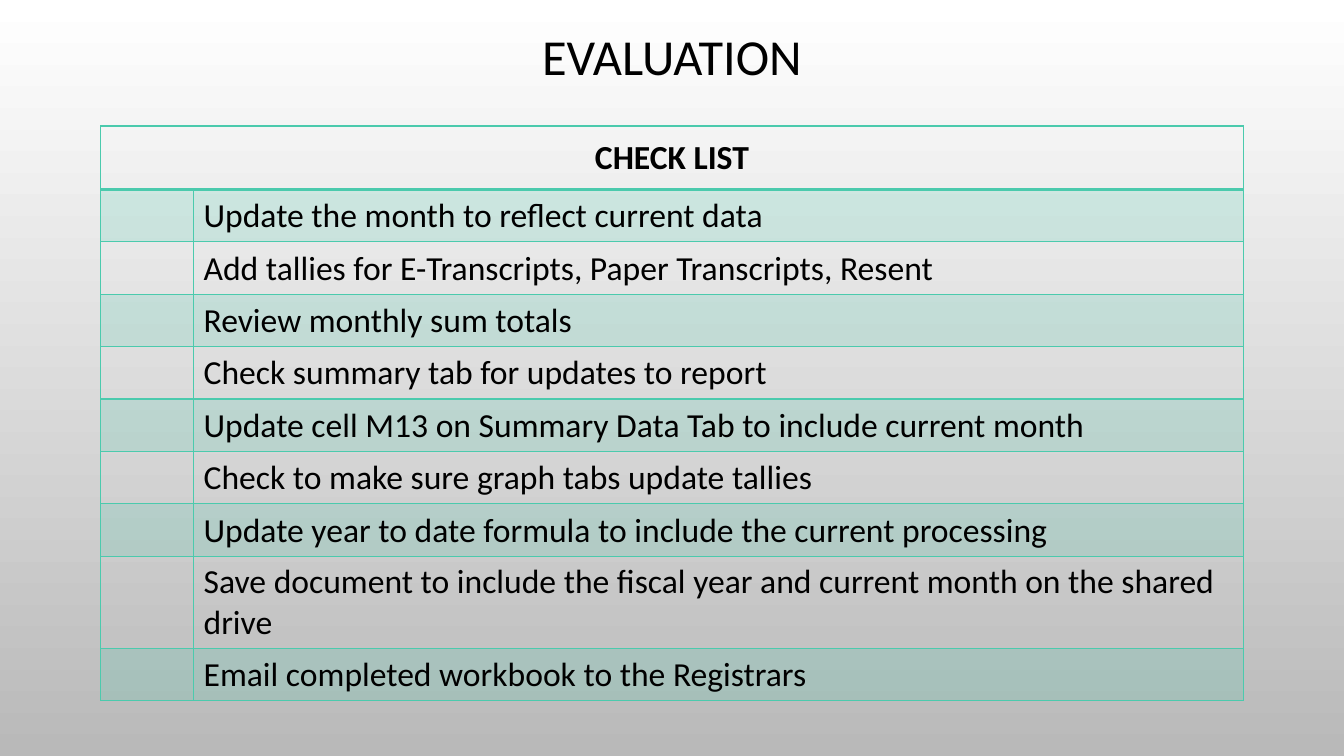
import pptx
import pptx.dml.color
import pptx.enum.text
import pptx.oxml
import pptx.oxml.ns
import pptx.util
from dataclasses import dataclass
from lxml import etree
from pptx.util import Inches


@dataclass(frozen=True)
class Theme:
    font: str = "Calibri"
    text: str = "000000"
    accent: str = "4BCAAD"
    band_opacity: int = 20
    background_top: str = "FFFFFF"
    background_bottom: str = "B9B9B9"
    title_size: int = 36
    table_size: int = 24
    border: float = 1
    header_border: float = 2


THEME = Theme()
HEADER = "CHECK LIST"
TASKS = [
    "Update the month to reflect current data",
    "Add tallies for E-Transcripts, Paper Transcripts, Resent",
    "Review monthly sum totals",
    "Check summary tab for updates to report",
    "Update cell M13 on Summary Data Tab to include current month",
    "Check to make sure graph tabs update tallies",
    "Update year to date formula to include the current processing",
    "Save document to include the fiscal year and current month on the shared drive",
    "Email completed workbook to the Registrars",
]
CHECK_WIDTH = 0.92
HEADER_HEIGHT, TASK_HEIGHT, LONG_TASK_HEIGHT = 0.63, 0.52, 0.56
LONG_TASK = 7


def rgb(value):
    return pptx.dml.color.RGBColor.from_string(value)


def add_text(text_frame, text, size, bold=False, alignment=None):
    paragraph = text_frame.paragraphs[0]
    paragraph.alignment = alignment
    run = paragraph.add_run()
    run.text = text
    run.font.name = THEME.font
    run.font.size = pptx.util.Pt(size)
    run.font.bold = bold
    run.font.color.rgb = rgb(THEME.text)
    return paragraph


def set_borders(cell, bottom=THEME.border, top=THEME.border):
    properties = cell._tc.get_or_add_tcPr()
    widths = {"L": THEME.border, "R": THEME.border, "T": top, "B": bottom}
    for side, width in widths.items():
        line = etree.SubElement(properties, pptx.oxml.ns.qn(f"a:ln{side}"),
                                w=str(int(pptx.util.Pt(width))))
        fill = etree.SubElement(line, pptx.oxml.ns.qn("a:solidFill"))
        etree.SubElement(fill, pptx.oxml.ns.qn("a:srgbClr"), val=THEME.accent)


def set_fill(cell, banded):
    if not banded:
        cell.fill.background()
        return
    cell.fill.solid()
    cell.fill.fore_color.rgb = rgb(THEME.accent)
    color = cell._tc.tcPr.find(".//" + pptx.oxml.ns.qn("a:solidFill")
                               + "[last()]")
    color = cell._tc.tcPr.find(pptx.oxml.ns.qn("a:solidFill"))[0]
    etree.SubElement(color, pptx.oxml.ns.qn("a:alpha"),
                     val=str(THEME.band_opacity * 1000))


def set_background(slide):
    fill = slide.background.fill
    fill.gradient()
    fill.gradient_angle = 270
    stops = (THEME.background_top, THEME.background_bottom)
    for position, (stop, color) in enumerate(zip(fill.gradient_stops, stops)):
        stop.position = position
        stop.color.rgb = rgb(color)


def place_title(slide, text, left, top, width, height):
    title = slide.shapes.title
    title.left, title.top = Inches(left), Inches(top)
    title.width, title.height = Inches(width), Inches(height)
    title.text_frame.vertical_anchor = pptx.enum.text.MSO_ANCHOR.MIDDLE
    paragraph = add_text(title.text_frame, text, THEME.title_size,
                         alignment=pptx.enum.text.PP_ALIGN.CENTER)
    paragraph.line_spacing = 0.9


def add_checklist(slide, left, top, width, height):
    table = slide.shapes.add_table(len(TASKS) + 1, 2, Inches(left), Inches(top),
                                   Inches(width), Inches(height)).table
    table.first_row = table.horz_banding = False
    table.columns[0].width = Inches(CHECK_WIDTH)
    table.columns[1].width = Inches(width - CHECK_WIDTH)

    # Header across both columns
    table.rows[0].height = Inches(HEADER_HEIGHT)
    header = table.cell(0, 0)
    header.merge(table.cell(0, 1))
    for cell in table.rows[0].cells:
        set_borders(cell, bottom=THEME.header_border)
        set_fill(cell, banded=False)
    header.vertical_anchor = pptx.enum.text.MSO_ANCHOR.MIDDLE
    add_text(header.text_frame, HEADER, THEME.table_size, bold=True,
             alignment=pptx.enum.text.PP_ALIGN.CENTER)

    # Tasks, every other row tinted
    for index, task in enumerate(TASKS):
        row = table.rows[index + 1]
        row.height = Inches(LONG_TASK_HEIGHT if index == LONG_TASK else TASK_HEIGHT)
        for cell in row.cells:
            set_borders(cell, top=THEME.header_border if index == 0 else THEME.border)
            set_fill(cell, banded=index % 2 == 0)
        task_cell = row.cells[1]
        task_cell.vertical_anchor = pptx.enum.text.MSO_ANCHOR.BOTTOM
        add_text(task_cell.text_frame, task, THEME.table_size)


def main():
    presentation = pptx.Presentation()
    presentation.slide_width = Inches(13.33)
    presentation.slide_height = Inches(7.5)
    slide = presentation.slides.add_slide(presentation.slide_layouts[5])
    set_background(slide)
    place_title(slide, "EVALUATION", 1, 0.25, 11.33, 0.67)
    add_checklist(slide, 1, 1.25, 11.33, 5.33)
    presentation.save("out.pptx")


if __name__ == "__main__":
    main()
